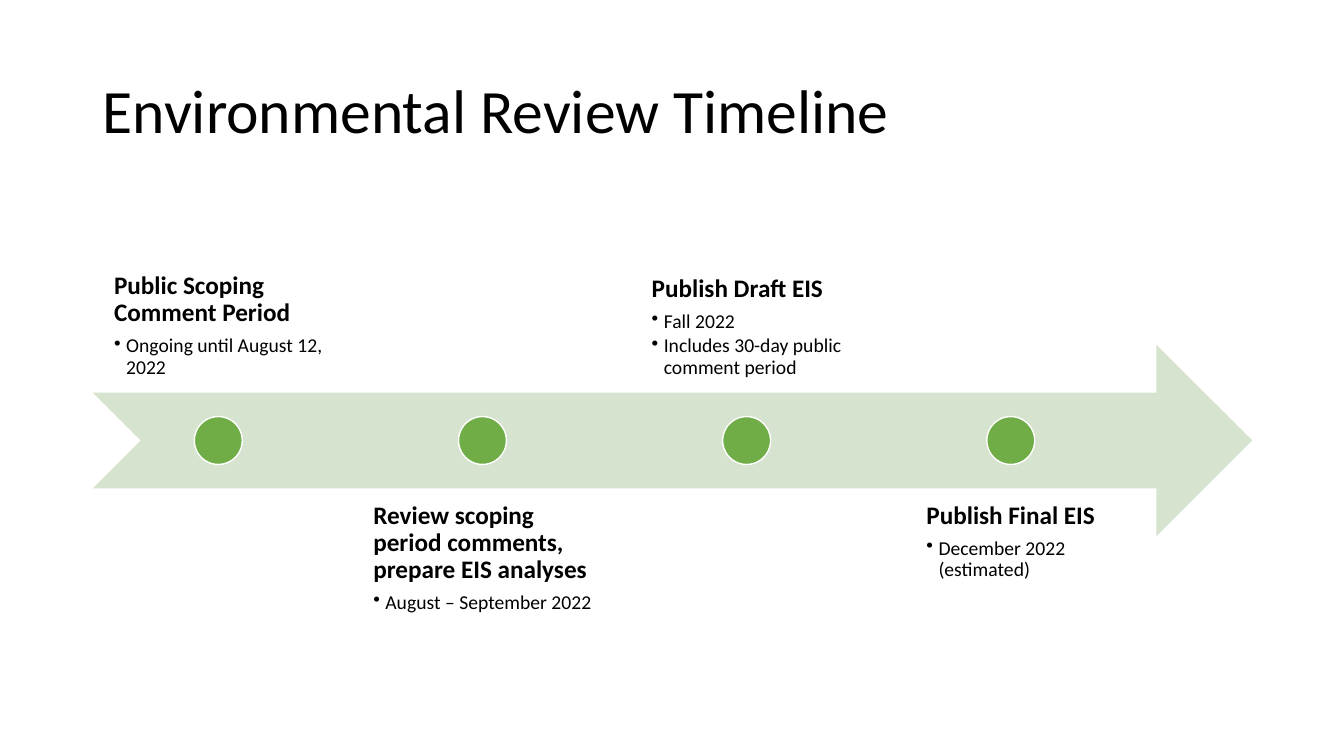
"""Build a one-slide environmental review timeline."""
from lxml.etree import SubElement
from pptx import Presentation
from pptx.dml.color import RGBColor
from pptx.enum.shapes import MSO_SHAPE as Preset
from pptx.enum.text import MSO_ANCHOR as Anchor
from pptx.oxml.ns import qn
from pptx.util import Inches, Pt

TITLE = "Environmental Review Timeline"
MILESTONES = [
    ("Public Scoping Comment Period", ["Ongoing until August 12, 2022"]),
    ("Review scoping period comments, prepare EIS analyses", ["August – September 2022"]),
    ("Publish Draft EIS", ["Fall 2022", "Includes 30-day public comment period"]),
    ("Publish Final EIS", ["December 2022 (estimated)"]),
]
COLORS = {"text": "000000", "arrow": "D5E3CF", "dot": "70AD47", "outline": "FFFFFF"}
FONT = "Calibri"

WIDTH, HEIGHT = 13.33, 7.5
MARGIN, CONTENT = 0.92, 11.5
ARROW_TOP, BAND = 3.42, 1.9
SHAFT_TOP = ARROW_TOP + BAND / 4
SHAFT_BOTTOM = SHAFT_TOP + BAND / 2
LABEL_WIDTH, STEP = 2.49, 2.62
DOT = BAND / 4
INSET, INDENT = 0.14, 0.12


def add_text(page, left, top, width, height, anchor):
    box = page.shapes.add_textbox(*map(Inches, (left, top, width, height)))
    frame = box.text_frame
    frame.word_wrap = True
    frame.vertical_anchor = anchor
    return frame


def write(para, text, size, bold=False, after=0):
    para.text = text
    para.line_spacing = 0.9
    para.space_after = Pt(after)
    font = para.font
    font.name, font.size, font.bold = FONT, Pt(size), bold
    font.color.rgb = RGBColor.from_string(COLORS["text"])


def add_bullet(para):
    para.level = 1
    props = para._p.get_or_add_pPr()
    props.set("marL", str(Inches(INDENT)))
    props.set("indent", str(-Inches(INDENT)))
    bullet = SubElement(props, qn("a:buChar"))
    bullet.set("char", "•")
    defaults = props.find(qn("a:defRPr"))
    defaults.addprevious(bullet)


def add_preset(page, preset, left, top, width, height, fill):
    shape = page.shapes.add_shape(preset, *map(Inches, (left, top, width, height)))
    shape.shadow.inherit = False
    shape.fill.solid()
    shape.fill.fore_color.rgb = RGBColor.from_string(COLORS[fill])
    shape.line.fill.background()
    return shape


def add_milestone(page, index, heading, details):
    left = MARGIN + index * STEP
    above = index % 2 == 0
    top = SHAFT_TOP - BAND if above else SHAFT_BOTTOM
    anchor = Anchor.BOTTOM if above else Anchor.TOP
    frame = add_text(page, left, top, LABEL_WIDTH, BAND, anchor)
    frame.margin_left = frame.margin_right = Inches(INSET)
    frame.margin_top = frame.margin_bottom = Inches(INSET)
    frame._txBody.bodyPr.set("anchorCtr", "1")
    write(frame.paragraphs[0], heading, 18, bold=True, after=6.3)
    for detail in details:
        para = frame.add_paragraph()
        write(para, detail, 14, after=2.1)
        add_bullet(para)

    dot_left = left + (LABEL_WIDTH - DOT) / 2
    dot_top = ARROW_TOP + (BAND - DOT) / 2
    dot = add_preset(page, Preset.OVAL, dot_left, dot_top, DOT, DOT, "dot")
    dot.line.color.rgb = RGBColor.from_string(COLORS["outline"])
    dot.line.width = Pt(1)


def main():
    deck = Presentation()
    deck.slide_width, deck.slide_height = Inches(WIDTH), Inches(HEIGHT)
    page = deck.slides.add_slide(deck.slide_layouts[6])

    title = add_text(page, MARGIN, 0.4, CONTENT, 1.45, Anchor.MIDDLE)
    write(title.paragraphs[0], TITLE, 44)
    add_preset(page, Preset.NOTCHED_RIGHT_ARROW, MARGIN, ARROW_TOP, CONTENT, BAND, "arrow")
    for index, (heading, details) in enumerate(MILESTONES):
        add_milestone(page, index, heading, details)

    deck.save("out.pptx")


if __name__ == "__main__":
    main()
